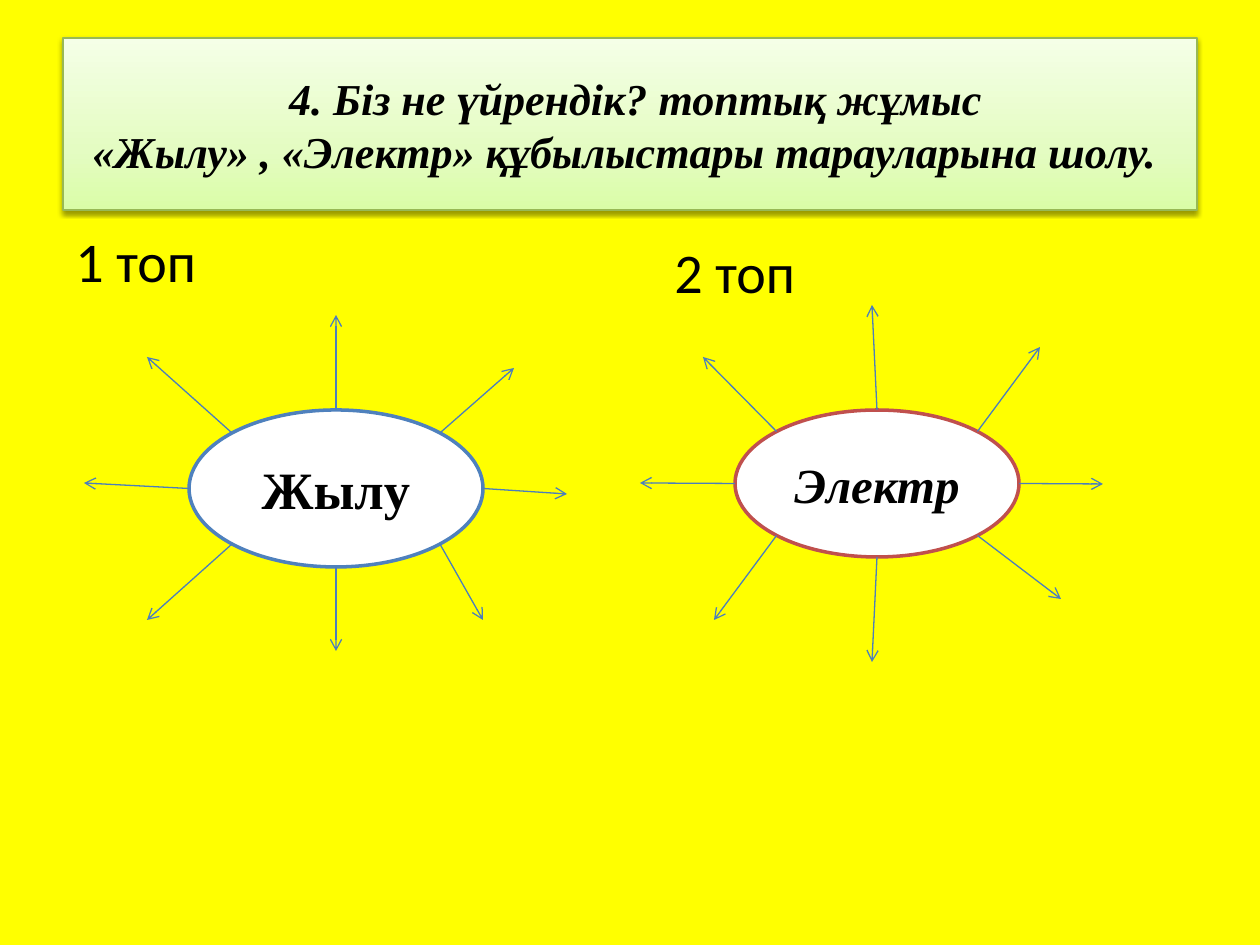
from copy import deepcopy
from math import cos, pi, sin

from lxml.etree import SubElement
from pptx import Presentation
from pptx.dml.color import RGBColor
from pptx.enum.shapes import MSO_CONNECTOR, MSO_SHAPE
from pptx.enum.text import MSO_ANCHOR, PP_ALIGN
from pptx.oxml.ns import qn
from pptx.util import Emu, Pt

EMU_PER_PX = 914400 / 126
COLORS = {
    "background": "FFFF00",
    "text": "000000",
    "title_low": "DAFDA7",
    "title_mid": "E4FCC2",
    "title_high": "F5FFE7",
    "title_line": "98B955",
    "oval": "FFFFFF",
    "heat": "4F81BD",
    "electricity": "C0504D",
    "arrow": "4B7EBC",
}
SERIF = "Times New Roman"


def px(value):
    return Emu(round(value * EMU_PER_PX))


def color(name):
    return RGBColor.from_string(COLORS[name])


def write_text(shape, text, *, size, font=SERIF, bold=False, italic=False,
               align=PP_ALIGN.CENTER, anchor=MSO_ANCHOR.MIDDLE, wrap=True):
    frame = shape.text_frame
    frame.word_wrap = wrap
    frame.vertical_anchor = anchor
    paragraph = frame.paragraphs[0]
    paragraph.text = text
    paragraph.alignment = align
    for run in paragraph.runs:
        run.font.name = font
        run.font.size = Pt(size)
        run.font.bold = bold
        run.font.italic = italic
        run.font.color.rgb = color("text")


def add_outlined_shape(slide, kind, box, line_color, line_width):
    shape = slide.shapes.add_shape(kind, *map(px, box))
    shape.shadow.inherit = False
    shape.line.color.rgb = color(line_color)
    shape.line.width = Pt(line_width)
    return shape


def fill_title_gradient(shape):
    """Blend three greens from the bottom edge to the top edge."""
    shape.fill.gradient()
    shape.fill.gradient_angle = 90
    stop_list = shape._element.spPr.find(qn("a:gradFill")).find(qn("a:gsLst"))
    stop_list.append(deepcopy(stop_list[0]))
    stops = (("title_low", 0), ("title_mid", 0.35), ("title_high", 1))
    for stop, (name, position) in zip(shape.fill.gradient_stops, stops):
        stop.color.rgb = color(name)
        stop.position = position


def add_soft_shadow(shape):
    effects = shape._element.spPr.find(qn("a:effectLst"))
    shadow = SubElement(effects, qn("a:outerShdw"), blurRad=str(Pt(3.1)),
                        dist=str(Pt(1.6)), dir="5400000", rotWithShape="0")
    shade = SubElement(shadow, qn("a:srgbClr"), val=COLORS["text"])
    SubElement(shade, qn("a:alpha"), val="38000")


def add_title(slide, box, text):
    shape = add_outlined_shape(slide, MSO_SHAPE.RECTANGLE, box, "title_line", 0.75)
    fill_title_gradient(shape)
    add_soft_shadow(shape)
    write_text(shape, text, size=25.2, bold=True, italic=True)


def add_arrow(slide, start, end):
    arrow = slide.shapes.add_connector(MSO_CONNECTOR.STRAIGHT, *map(px, start + end))
    arrow.line.color.rgb = color("arrow")
    arrow.line.width = Pt(0.75)
    SubElement(arrow.line._get_or_add_ln(), qn("a:tailEnd"), type="arrow")
    SubElement(arrow._element.spPr, qn("a:effectLst"))


def add_topic_map(slide, origin, label, label_box, topic, oval_box, tips,
                  outline, size, italic=False):
    """Place a group label and an oval whose arrows run anticlockwise from its top."""
    left, top = origin

    def offset(box):
        return (left + box[0], top + box[1], *box[2:])

    label_shape = slide.shapes.add_textbox(*map(px, offset(label_box)))
    write_text(label_shape, label, size=32, font="Calibri",
               align=PP_ALIGN.LEFT, anchor=MSO_ANCHOR.TOP, wrap=False)

    oval_box = offset(oval_box)
    oval = add_outlined_shape(slide, MSO_SHAPE.OVAL, oval_box, outline, 2)
    oval.fill.solid()
    oval.fill.fore_color.rgb = color("oval")
    write_text(oval, topic, size=size, bold=True, italic=italic)

    x, y, width, height = oval_box
    for index, tip in enumerate(tips):
        angle = pi / 2 + index * pi / 4
        start = (x + width / 2 * (1 + cos(angle)), y + height / 2 * (1 - sin(angle)))
        add_arrow(slide, start, offset(tip))


def main():
    presentation = Presentation()
    presentation.slide_width, presentation.slide_height = px(1260), px(945)
    slide = presentation.slides.add_slide(presentation.slide_layouts[6])
    slide.background.fill.solid()
    slide.background.fill.fore_color.rgb = color("background")

    add_title(slide, (63, 38, 1134, 172),
              " 4. Біз не үйрендік? топтық жұмыс\v"
              "«Жылу» , «Электр» құбылыстары тарауларына шолу. ")
    add_topic_map(slide, (63, 220), "1 топ", (0, 0, 147, 81),
                  "Жылу", (126, 190, 294, 157),
                  [(273, 95), (84, 137), (21, 263), (84, 400),
                   (273, 431), (420, 400), (504, 274), (451, 148)],
                  outline="heat", size=30)
    add_topic_map(slide, (640, 231), "2 топ", (22, 0, 147, 81),
                  "Электр", (95, 179, 284, 147),
                  [(232, 74), (63, 126), (0, 252), (74, 389),
                   (232, 431), (421, 368), (463, 253), (400, 116)],
                  outline="electricity", size=28, italic=True)
    presentation.save("out.pptx")


if __name__ == "__main__":
    main()
